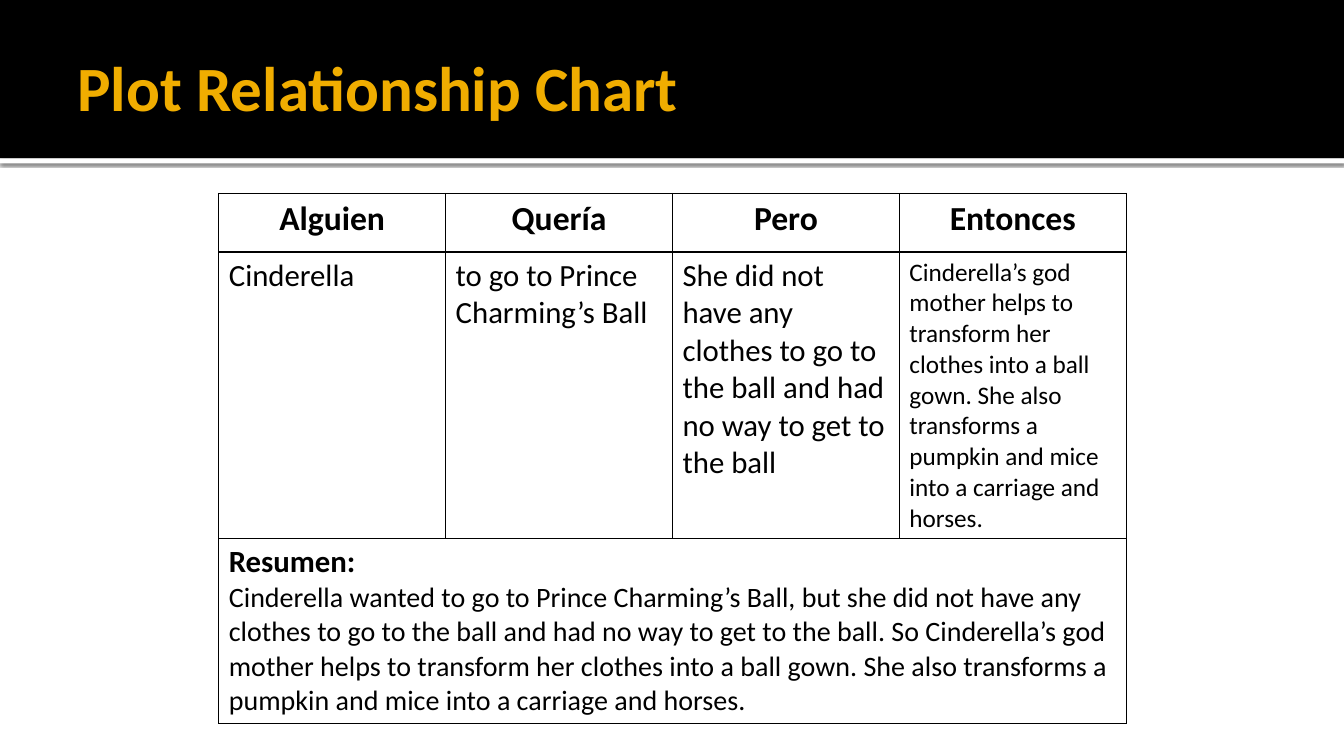
from lxml import etree
from pptx import Presentation
from pptx import util as u
from pptx.dml.color import RGBColor
from pptx.enum import shapes, text
from pptx.oxml import parse_xml
from pptx.oxml.ns import nsdecls, qn

BLACK, WHITE, GOLD = "000000", "FFFFFF", "F0AD00"

HEADINGS = ["Alguien", "Quería", "Pero", "Entonces"]
STORY = [
    ("Cinderella", 22),
    ("to go to Prince Charming’s Ball", 22),
    ("She did not have any clothes to go to the ball and had no way to get to the ball", 22),
    ("Cinderella’s god mother helps to transform her clothes into a ball gown. "
     "She also transforms a pumpkin and mice into a carriage and horses.", 18),
]
SUMMARY = (
    "Cinderella wanted to go to Prince Charming’s Ball, but she did not have any clothes "
    "to go to the ball and had no way to get to the ball. So Cinderella’s god mother helps "
    "to transform her clothes into a ball gown. She also transforms a pumpkin and mice "
    "into a carriage and horses."
)
ROW_HEIGHTS = [0.58, 2.84, 1.84]


def color(value):
    return RGBColor.from_string(value)


def inches(box):
    return [u.Inches(length) for length in box]


def write(para, words, size, bold=False, ink=BLACK, align=text.PP_ALIGN.LEFT):
    para.alignment = align
    span = para.add_run()
    span.text = words
    span.font.color.rgb = color(ink)
    look = {"name": "Calibri", "size": u.Pt(size), "bold": bold}
    for key, value in look.items():
        setattr(span.font, key, value)


def add_band(page, box, fill):
    band = page.shapes.add_shape(shapes.MSO_SHAPE.RECTANGLE, *inches(box))
    band.shadow.inherit = False
    band.fill.solid()
    band.fill.fore_color.rgb = color(fill)
    band.line.fill.background()
    return band


def add_soft_shadow(shape):
    effects = shape._element.spPr.find(qn("a:effectLst"))
    effects.append(parse_xml(
        f'<a:outerShdw {nsdecls("a")} blurRad="{u.Pt(2.5)}" dist="{u.Pt(0.8)}" '
        f'dir="5400000" rotWithShape="0"><a:srgbClr val="{BLACK}">'
        '<a:alpha val="60000"/></a:srgbClr></a:outerShdw>'))


def add_header(page, box):
    """Black title band with a shadowed white strip along its lower edge."""
    left, top, width, height = box
    add_soft_shadow(add_band(page, (left, top + height, width, 0.05), WHITE))
    add_band(page, box, BLACK)
    title_box = (left + 0.67, top + 0.17, width - 1.33, height - 0.2)
    frame = page.shapes.add_textbox(*inches(title_box)).text_frame
    settings = {
        "word_wrap": True,
        "vertical_anchor": text.MSO_ANCHOR.MIDDLE,
        "margin_left": u.Inches(0.1),
        "margin_right": u.Inches(0.05),
    }
    for key, value in settings.items():
        setattr(frame, key, value)
    write(frame.paragraphs[0], "Plot Relationship Chart", 45, True, GOLD)


def outline(cell):
    """Clear the cell's fill and draw a thin black line on all four sides."""
    cell.fill.background()
    properties = cell._tc.get_or_add_tcPr()
    for place, side in enumerate(["lnL", "lnR", "lnT", "lnB"]):
        line = etree.Element(qn(f"a:{side}"), w=str(u.Pt(1)))
        fill = etree.SubElement(line, qn("a:solidFill"))
        etree.SubElement(fill, qn("a:srgbClr"), val=BLACK)
        properties.insert(place, line)


def add_plot_table(page, box):
    left, top, width, _ = box
    frame = page.shapes.add_table(len(ROW_HEIGHTS), len(HEADINGS), *inches(box))
    table = frame.table
    for column in table.columns:
        column.width = u.Inches(width / len(HEADINGS))
    for row, height in zip(table.rows, ROW_HEIGHTS):
        row.height = u.Inches(height)
    for cell in table.iter_cells():
        outline(cell)

    for index, (heading, (words, size)) in enumerate(zip(HEADINGS, STORY)):
        write(table.cell(0, index).text_frame.paragraphs[0], heading, 24, True,
              align=text.PP_ALIGN.CENTER)
        write(table.cell(1, index).text_frame.paragraphs[0], words, size)

    summary = table.cell(2, 0)
    summary.merge(table.cell(2, len(HEADINGS) - 1))
    write(summary.text_frame.paragraphs[0], "Resumen:", 22, True)
    write(summary.text_frame.add_paragraph(), SUMMARY, 20)


def main():
    deck = Presentation()
    deck.slide_width, deck.slide_height = inches((13.33, 7.5))
    page = deck.slides.add_slide(deck.slide_layouts[6])
    add_header(page, (0, 0, 13.33, 1.57))
    add_plot_table(page, (2.17, 1.92, 9, sum(ROW_HEIGHTS)))
    deck.save("out.pptx")


if __name__ == "__main__":
    main()
